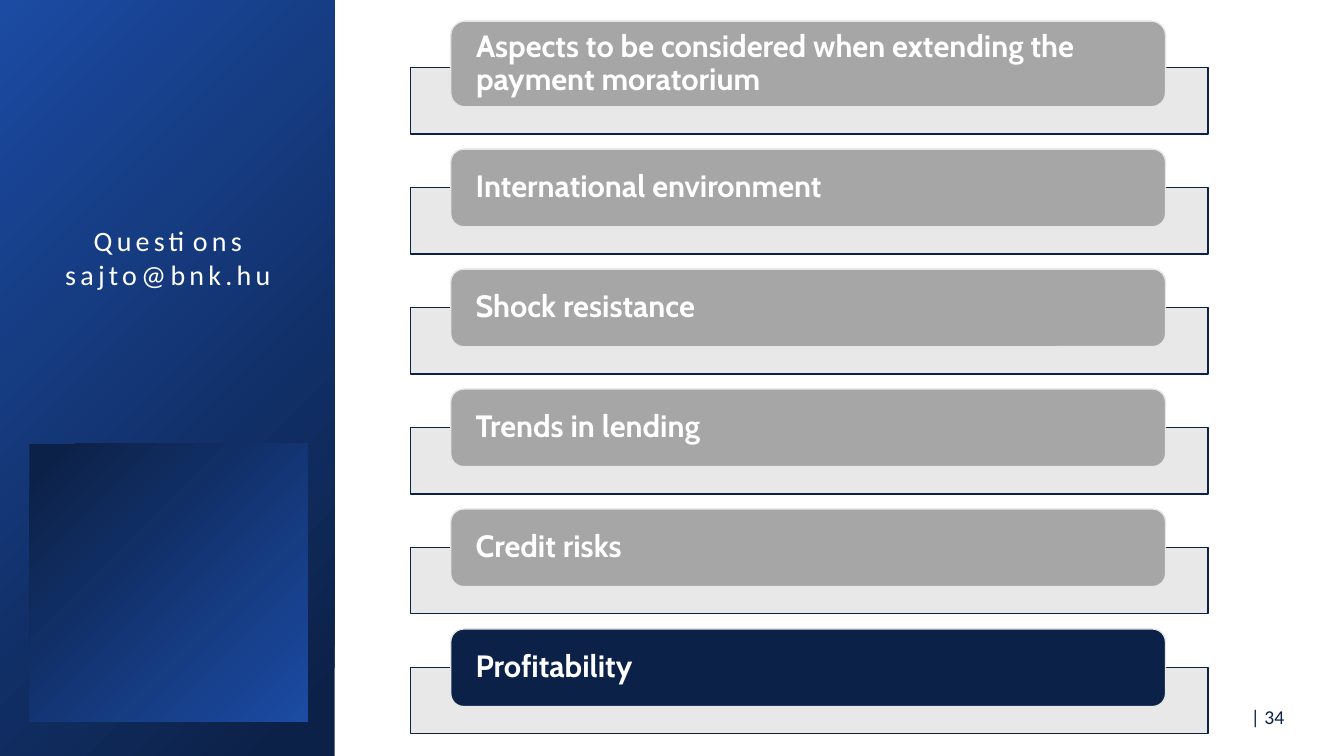
import pptx
import pptx.util
import pptx.dml.color
import pptx.enum.shapes
import pptx.enum.text
import pptx.oxml
import pptx.oxml.ns

Inches = pptx.util.Inches
RGBColor = pptx.dml.color.RGBColor
MSO_SHAPE = pptx.enum.shapes.MSO_SHAPE
PP_ALIGN = pptx.enum.text.PP_ALIGN
MSO_ANCHOR = pptx.enum.text.MSO_ANCHOR

NAVY = RGBColor(0x0C, 0x21, 0x48)
BLUE = RGBColor(0x1B, 0x4B, 0xA3)
GREY = RGBColor(0xA6, 0xA6, 0xA6)
PALE = RGBColor(0xE7, 0xE6, 0xE6)
WHITE = RGBColor(0xFF, 0xFF, 0xFF)

TOPICS = [
    "Aspects to be considered when extending the payment moratorium",
    "International environment",
    "Shock resistance",
    "Trends in lending",
    "Credit risks",
    "Profitability",
]


def write(sp, *lines, size, color, font="Calibri", bold=False, align=PP_ALIGN.LEFT,
          anchor=MSO_ANCHOR.TOP, spacing=1.0, tracking=0, inset=(0.1, 0.05)):
    tf = sp.text_frame
    tf.word_wrap = True
    tf.auto_size = pptx.enum.text.MSO_AUTO_SIZE.NONE
    tf.vertical_anchor = anchor
    tf.margin_left = tf.margin_right = Inches(inset[0])
    tf.margin_top = tf.margin_bottom = Inches(inset[1])
    for i, line in enumerate(lines):
        p = tf.add_paragraph() if i else tf.paragraphs[0]
        p.alignment = align
        p.line_spacing = spacing
        p.space_before = pptx.util.Pt(0)
        r = p.add_run()
        r.text = line
        r.font.name = font
        r.font.size = pptx.util.Pt(size)
        r.font.bold = bold
        r.font.color.rgb = color
        if tracking:
            r.font._element.set("spc", str(tracking * 100))


def add_box(s, kind, left, top, width, height, fill=None, line=None):
    sp = s.shapes.add_shape(kind, Inches(left), Inches(top), Inches(width), Inches(height))
    sp.shadow.inherit = False
    if fill is None:
        sp.fill.gradient()
        sp.fill.gradient_angle = 135
        for stop, position, color in zip(sp.fill.gradient_stops, (0.06, 1), (NAVY, BLUE)):
            stop.position = position
            stop.color.rgb = color
    else:
        sp.fill.solid()
        sp.fill.fore_color.rgb = fill
    if line is None:
        sp.line.fill.background()
    else:
        sp.line.color.rgb = line
        sp.line.width = pptx.util.Pt(1)
    return sp


def add_sidebar(s, left, top, width, height):
    add_box(s, MSO_SHAPE.RECTANGLE, left, top, width, height)
    square = add_box(s, MSO_SHAPE.RECTANGLE, left + 0.3, top + 4.4, 2.76, 2.76)
    square.rotation = 180
    title = s.shapes.title
    s.shapes._spTree.append(title._element)
    title.left, title.top = Inches(left + 0.41), Inches(top + 2.17)
    title.width, title.height = Inches(2.53), Inches(0.77)
    write(title, "Questions", "sajto@bnk.hu", size=20, color=WHITE,
          align=PP_ALIGN.CENTER, tracking=3)


def add_topic(s, left, top, width, text, bar_height, bar_color):
    panel = add_box(s, MSO_SHAPE.RECTANGLE, left, top, width, 0.66, PALE, NAVY)
    color = panel._element.spPr.find(
        pptx.oxml.ns.qn("a:solidFill") + "/" + pptx.oxml.ns.qn("a:srgbClr"))
    color.append(pptx.oxml.parse_xml(
        f'<a:alpha {pptx.oxml.ns.nsdecls("a")} val="90000"/>'))
    bar = add_box(s, MSO_SHAPE.ROUNDED_RECTANGLE, left + 0.4, top + 0.39 - bar_height,
                  width - 0.82, bar_height, bar_color, PALE)
    write(bar, text, size=22, color=WHITE, font="Cabin", bold=True,
          anchor=MSO_ANCHOR.MIDDLE, spacing=0.9, inset=(0.21, 0))


def add_topics(s, left, top, width, pitch):
    for i, text in enumerate(TOPICS):
        add_topic(s, left, top + i * pitch, width, text,
                  bar_height=0.77 if i else 0.85,
                  bar_color=NAVY if text == TOPICS[-1] else GREY)


def add_page_number(s, left, top, width, height):
    sp = s.shapes.add_textbox(Inches(left), Inches(top), Inches(width), Inches(height))
    write(sp, "| 34 ", size=14, color=NAVY, align=PP_ALIGN.RIGHT, anchor=MSO_ANCHOR.MIDDLE)


def main():
    prs = pptx.Presentation()
    prs.slide_width, prs.slide_height = Inches(13.33), Inches(7.5)
    s = prs.slides.add_slide(prs.slide_layouts.get_by_name("Title Only"))
    add_sidebar(s, -0.01, 0, 3.33, 7.5)
    add_page_number(s, 12.19, 6.9, 0.69, 0.41)
    add_topics(s, 4.07, 0.67, 7.91, 1.19)
    prs.save("out.pptx")


if __name__ == "__main__":
    main()
